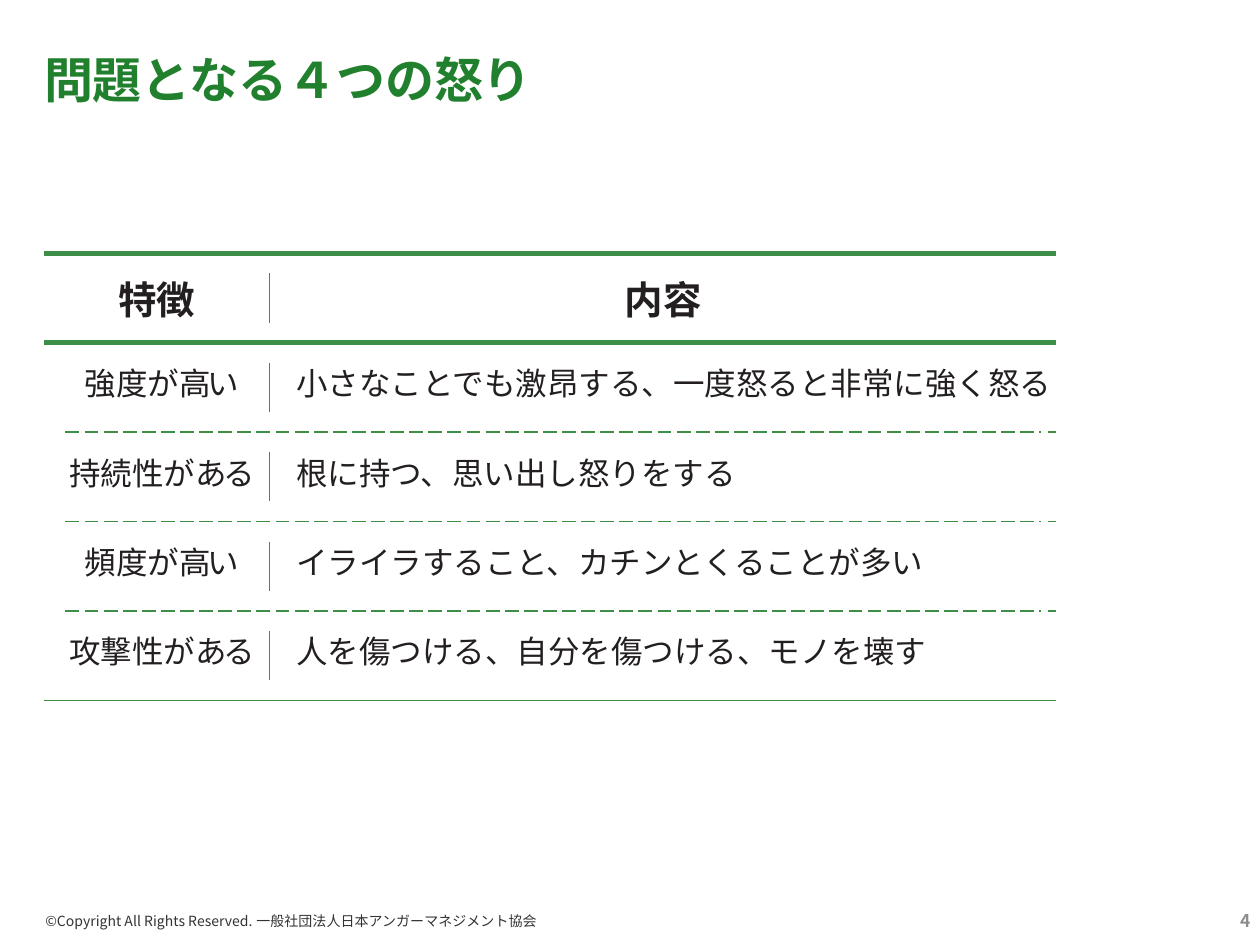
from lxml.etree import SubElement
from pptx import Presentation
from pptx.dml.color import RGBColor
from pptx.enum.dml import MSO_LINE
from pptx.enum.shapes import MSO_CONNECTOR
from pptx.enum.text import MSO_ANCHOR, PP_ALIGN
from pptx.oxml.ns import qn
from pptx.util import Inches, Pt

COLORS = {
    "title": "21802D",
    "rule": "3D8E47",
    "body": "231F20",
    "footer": "333333",
    "number": "8C8C8C",
}
BODY_FONT = "Noto Sans CJK JP"

prs = Presentation()
prs.slide_width = Inches(10)
prs.slide_height = Inches(7.5)
slide = prs.slides.add_slide(prs.slide_layouts[6])


def add_text(box, pieces, size, color, bold=False, align=PP_ALIGN.LEFT,
             font=BODY_FONT, inset=0.01, anchor=MSO_ANCHOR.TOP):
    frame = slide.shapes.add_textbox(*[Inches(v) for v in box]).text_frame
    frame.word_wrap = True
    frame.vertical_anchor = anchor
    frame.margin_left = frame.margin_top = Inches(inset)
    frame.margin_right = frame.margin_bottom = 0
    paragraph = frame.paragraphs[0]
    paragraph.alignment = align
    for text, spacing in pieces:
        run = paragraph.add_run()
        run.text = text
        run.font.size = Pt(size)
        run.font.bold = bold
        run.font.name = font
        run.font.color.rgb = RGBColor.from_string(COLORS[color])
        properties = run._r.get_or_add_rPr()
        SubElement(properties, qn("a:ea")).set("typeface", font)
        if spacing:
            properties.set("spc", str(round(spacing * 100)))


def add_rule(x1, y1, x2, y2, width=1, dash=None):
    rule = slide.shapes.add_connector(
        MSO_CONNECTOR.STRAIGHT, Inches(x1), Inches(y1), Inches(x2), Inches(y2))
    rule.line.color.rgb = RGBColor.from_string(COLORS["rule"])
    rule.line.width = Pt(width)
    rule.line.dash_style = dash
    SubElement(rule._element.spPr, qn("a:effectLst"))


LEFT, RIGHT, DIVIDER = 0.35, 8.38, 2.14
TOP, ROW_HEIGHT = 2.01, 0.71

add_text((LEFT, 0.39, 9.14, 0.47), [("問題となる４つの怒り", 0)], 28, "title",
         bold=True, font="Arial", inset=0, anchor=MSO_ANCHOR.MIDDLE)

headings = [
    (0.92, [("特徴", 0.1)]),
    (4.94, [("内", -0.8), ("容", 0)]),
]
for x, heading in headings:
    add_text((x, 2.18, 0.64, 0.39), heading, 22, "body",
             bold=True, align=PP_ALIGN.CENTER)

high = [("度", -1.2), ("が", -0.4), ("高い", -1.6)]
present = [("性", -0.8), ("が", -1), ("ある", -1.9)]
anger_types = [
    ([("強", -0.2)] + high, "小さなことでも激昂する、一度怒ると非常に強く怒る"),
    ([("持", -0.1), ("続", -0.2)] + present, "根に持つ、思い出し怒りをする"),
    ([("頻", 0.1)] + high, "イライラすること、カチンとくることが多い"),
    ([("攻", -0.6), ("撃", 0.1)] + present, "人を傷つける、自分を傷つける、モノを壊す"),
]
for row, (feature, description) in enumerate(anger_types, start=1):
    y = TOP + row * ROW_HEIGHT + 0.16
    add_text((0.42, y, 1.72, 0.32), feature, 18, "body", align=PP_ALIGN.CENTER)
    add_text((2.34, y, 6.69, 0.32), [(description, 0)], 18, "body")

for row in range(5):
    y = TOP + row * ROW_HEIGHT
    add_rule(DIVIDER, y + 0.16, DIVIDER, y + 0.55)
    if row < 2:
        add_rule(LEFT, y, RIGHT, y, width=2.83)
    else:
        add_rule(0.52, y, 8.26, y, dash=MSO_LINE.LONG_DASH)
        add_rule(8.32, y, RIGHT, y)
bottom = TOP + 5 * ROW_HEIGHT
add_rule(LEFT, bottom, RIGHT, bottom)

add_text((LEFT, 7.23, 4.07, 0.15),
         [("©Copyright All Rights Reserved. 一般社団法人日本アンガーマネジメント協会", 0)],
         8, "footer")
add_text((7.63, 7.22, 2.3, 0.17), [("4", 0)], 10, "number",
         bold=True, align=PP_ALIGN.RIGHT, inset=0)

prs.save("out.pptx")
